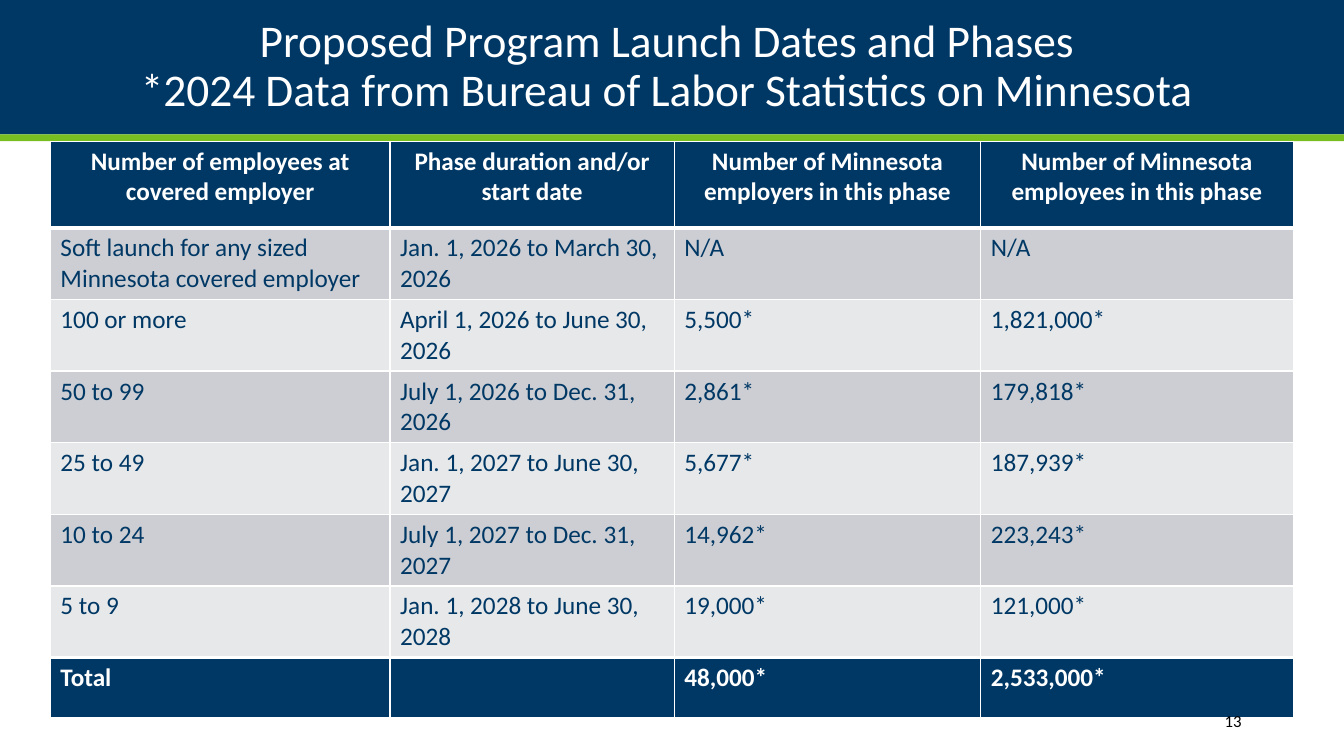
import pptx
import pptx.util
import pptx.dml.color
import pptx.enum.shapes
import pptx.enum.text
import pptx.oxml

COLORS = {
    "navy": "003865",
    "green": "78BE21",
    "white": "FFFFFF",
    "black": "000000",
    "dark": "CCCED3",
    "light": "E7E8EA",
}
ALIGN = pptx.enum.text.PP_ALIGN
MIDDLE = pptx.enum.text.MSO_ANCHOR.MIDDLE
NS = "http://schemas.openxmlformats.org/drawingml/2006/main"

TITLE = (
    "Proposed Program Launch Dates and Phases \n"
    "*2024 Data from Bureau of Labor Statistics on Minnesota "
)
HEADS = [
    "Number of employees at covered employer",
    "Phase duration and/or start date",
    "Number of Minnesota employers in this phase",
    "Number of Minnesota employees in this phase",
]
PHASES = [
    ["Soft launch for any sized Minnesota covered employer",
     "Jan. 1, 2026 to March 30, 2026", "N/A", "N/A"],
    ["100 or more", "April 1, 2026 to June 30, 2026", "5,500*", "1,821,000*"],
    ["50 to 99", "July 1, 2026 to Dec. 31, 2026", "2,861*", "179,818*"],
    ["25 to 49", "Jan. 1, 2027 to June 30, 2027", "5,677*", "187,939*"],
    ["10 to 24", "July 1, 2027 to Dec. 31, 2027", "14,962*", "223,243*"],
    ["5 to 9", "Jan. 1, 2028 to June 30, 2028", "19,000*", "121,000*"],
]
TOTAL = ["Total", "", "48,000*", "2,533,000*"]


def color(name):
    return pptx.dml.color.RGBColor.from_string(COLORS[name])


def write(frame, text, size=18, tint="navy", bold=False, align=ALIGN.LEFT,
          space=None, font="Calibri"):
    frame.word_wrap = True
    para = frame.paragraphs[0]
    para.text = text
    para.alignment = align
    para.line_spacing = space
    for run in para.runs:
        run.font.name = font
        run.font.size = pptx.util.Pt(size)
        run.font.bold = bold
        run.font.color.rgb = color(tint)


def edge(cell, side, width):
    cell._tc.get_or_add_tcPr().append(pptx.oxml.parse_xml(
        f'<a:ln{side} xmlns:a="{NS}" w="{pptx.util.Pt(width)}"><a:solidFill>'
        f'<a:srgbClr val="{COLORS["white"]}"/></a:solidFill></a:ln{side}>'))


class Deck:
    cols, rows = 80, 45

    def __init__(self):
        self.file = pptx.Presentation()
        self.file.slide_width = pptx.util.Inches(13.33)
        self.file.slide_height = pptx.util.Inches(7.5)
        self.slide = self.file.slides.add_slide(self.file.slide_layouts[5])

    def wide(self, count):
        return round(self.file.slide_width * count / self.cols)

    def high(self, count):
        return round(self.file.slide_height * count / self.rows)

    def box(self, left, top, width, height):
        return self.wide(left), self.high(top), self.wide(width), self.high(height)

    def band(self, top, height, tint):
        shape = self.slide.shapes.add_shape(
            pptx.enum.shapes.MSO_SHAPE.RECTANGLE,
            *self.box(0, top, self.cols, height))
        shape.shadow.inherit = False
        shape.fill.solid()
        shape.fill.fore_color.rgb = color(tint)
        shape.line.fill.background()
        self.slide.shapes.title.element.addprevious(shape.element)

    def title(self, text, *place):
        head = self.slide.shapes.title
        head.left, head.top, head.width, head.height = self.box(*place)
        frame = head.text_frame
        frame.vertical_anchor = MIDDLE
        frame.margin_left = frame.margin_right = 0
        frame.margin_top = frame.margin_bottom = pptx.util.Inches(0.2)
        write(frame, text, size=32.4, tint="white", align=ALIGN.CENTER, space=0.9)

    def table(self, data, left, top, widths, heights):
        grid = self.slide.shapes.add_table(
            len(data), len(widths),
            *self.box(left, top, sum(widths), sum(heights))).table
        for col, width in zip(grid.columns, widths):
            col.width = self.wide(width)
        for row, height in zip(grid.rows, heights):
            row.height = self.high(height)
        last = len(data) - 1
        for i, line in enumerate(data):
            ends = i in (0, last)
            fill = "navy" if ends else ("dark" if i % 2 else "light")
            for j, text in enumerate(line):
                cell = grid.cell(i, j)
                edge(cell, "L", 1)
                edge(cell, "R", 1)
                edge(cell, "T", 3 if i in (1, last) else 1)
                edge(cell, "B", 3 if i in (0, last - 1) else 1)
                cell.fill.solid()
                cell.fill.fore_color.rgb = color(fill)
                write(cell.text_frame, text, bold=ends,
                      tint="white" if ends else "navy",
                      align=ALIGN.LEFT if i else ALIGN.CENTER)

    def label(self, text, *place, **style):
        frame = self.slide.shapes.add_textbox(*self.box(*place)).text_frame
        frame.vertical_anchor = MIDDLE
        write(frame, text, **style)


def main():
    deck = Deck()
    deck.band(0, 8, "navy")
    deck.band(8, 0.4, "green")
    deck.title(TITLE, 5.5, 0, 69, 8)
    deck.table([HEADS, *PHASES, TOTAL], 3, 8.4,
               [20.22, 16.92, 18.24, 18.6],
               [5.16] + [4.2] * len(PHASES) + [3.6])
    deck.label("13", 64.9, 41.7, 9.6, 2.4,
               size=12, tint="black", align=ALIGN.RIGHT)
    deck.file.save("out.pptx")


if __name__ == "__main__":
    main()
